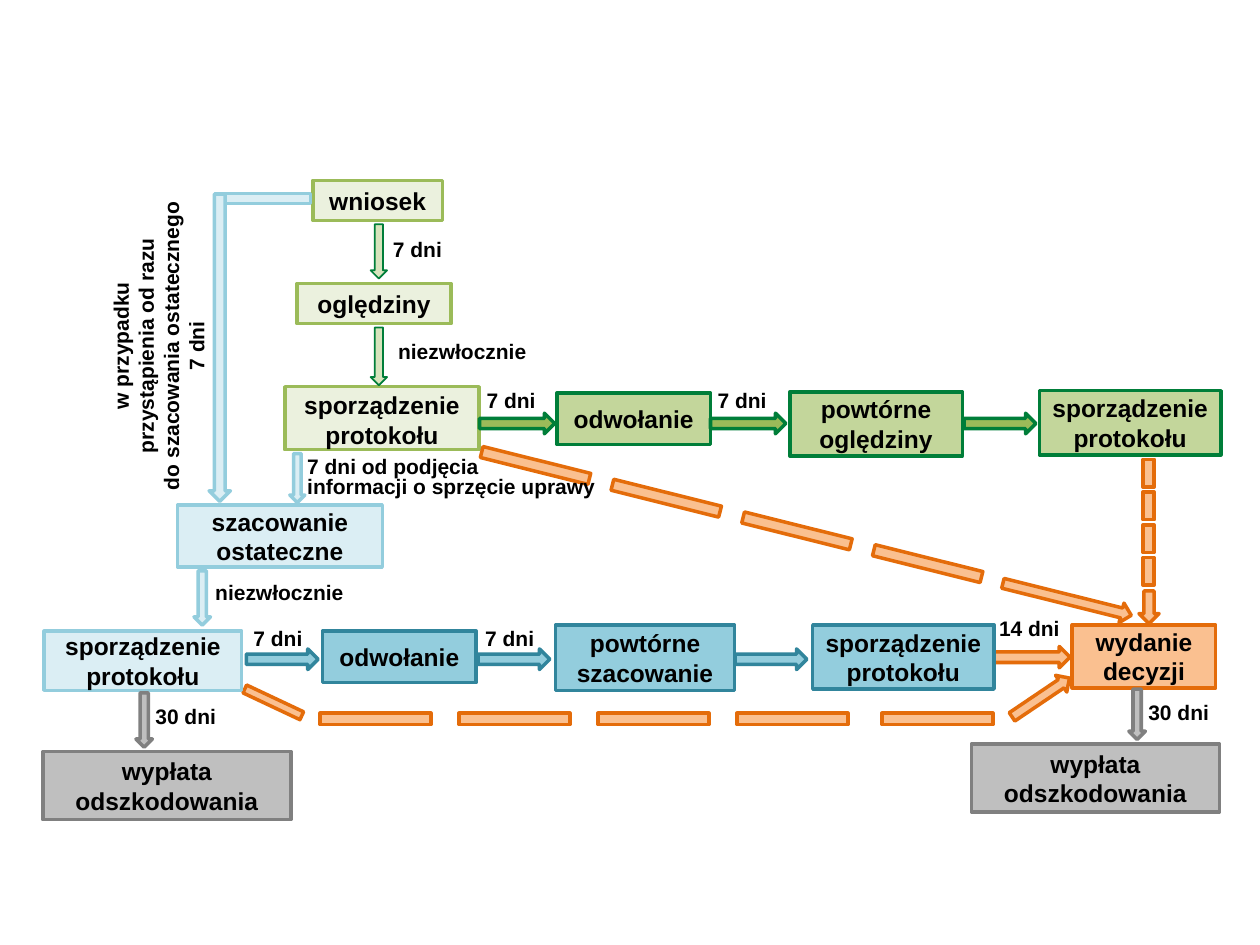
from math import cos, radians, sin

from pptx import Presentation
from pptx.dml.color import RGBColor
from pptx.enum.shapes import MSO_SHAPE
from pptx.enum.text import MSO_ANCHOR, PP_ALIGN
from pptx.util import Pt

# Skins: fill, line, line width
PALE = ("EBF1DE", "9BBB59", 2)
THIN = ("D7E4BD", "007E39", 1)
GREEN = ("C3D69B", "007E39", 2)
LEAF = ("9BBB59", "007E39", 2)
ICE = ("DBEEF4", "93CDDD", 2)
BLUE = ("93CDDD", "31859C", 2)
ORANGE = ("FAC090", "E46C0A", 2)
GREY = ("BFBFBF", "808080", 2)
RIGHT = 270


def hue(code):
    return RGBColor.from_string(code)


def write(frame, lines, align, space=None):
    """Fill a frame with lines, each a list of (text, size) runs."""
    frame.word_wrap = True
    for i, line in enumerate(lines):
        para = frame.add_paragraph() if i else frame.paragraphs[0]
        para.alignment = align
        if space:
            para.line_spacing = Pt(space)
        for text, size in line:
            run = para.add_run()
            run.text = text
            run.font.name = "Arial"
            run.font.size = Pt(size)
            run.font.bold = True
            run.font.color.rgb = hue("000000")


def draw(slide, kind, x, y, w, h, skin, turn=0):
    fill, line, width = skin
    shape = slide.shapes.add_shape(kind, Pt(x), Pt(y), Pt(w), Pt(h))
    shape.shadow.inherit = False
    shape.fill.solid()
    shape.fill.fore_color.rgb = hue(fill)
    shape.line.color.rgb = hue(line)
    shape.line.width = Pt(width)
    shape.rotation = turn
    return shape


def box(slide, x, y, w, h, skin, *runs):
    """Step box; a plain string is one run of 14 points."""
    shape = draw(slide, MSO_SHAPE.RECTANGLE, x, y, w, h, skin)
    shape.text_frame.vertical_anchor = MSO_ANCHOR.MIDDLE
    line = [(run, 14) if isinstance(run, str) else run for run in runs]
    write(shape.text_frame, [line], PP_ALIGN.CENTER)


def label(slide, x, y, w, *lines, h=21.6, turn=0, align=PP_ALIGN.LEFT, space=None):
    note = slide.shapes.add_textbox(Pt(x), Pt(y), Pt(w), Pt(h))
    note.rotation = turn
    write(note.text_frame, [[(line, 12)] for line in lines], align, space)


def dash(slide, x, y, long, thick, skin, turn=0):
    """Bar centred on x, y."""
    draw(slide, MSO_SHAPE.RECTANGLE, x - long / 2, y - thick / 2,
         long, thick, skin, turn)


def arrow(slide, x, y, long, thick, skin, turn=0):
    """Arrow whose tail is at x, y; it points down before its turn."""
    mid_x = x - sin(radians(turn)) * long / 2
    mid_y = y + cos(radians(turn)) * long / 2
    draw(slide, MSO_SHAPE.DOWN_ARROW, mid_x - thick / 2, mid_y - long / 2,
         thick, long, skin, turn)


def inspect(slide, x, y):
    """Request, inspection and report, from top to bottom."""
    box(slide, x + 16, y, 74, 23, PALE, "wniosek")
    box(slide, x + 7, y + 59, 88, 23, PALE, "oględziny")
    box(slide, x, y + 118, 111, 36, PALE,
        "sporządzenie", (" ", 16), "protokołu")
    arrow(slide, x + 53.7, y + 25.2, 31, 9.4, THIN)
    arrow(slide, x + 53.7, y + 84.2, 33, 9.4, THIN)
    label(slide, x + 54.7, y + 28.8, 52, "7 dni")
    label(slide, x + 57.6, y + 87, 106, "niezwłocznie")


def appeal(slide, x, y, skin, tip, steps, rise):
    """Row along the axis y; a step is arrow left, its length, box left,
    box centre, width, height and text."""
    for tail, long, left, mid, w, h, text in steps:
        arrow(slide, x + tail, y, long, 11.8, tip, RIGHT)
        box(slide, x + left, y + mid - h / 2, w, h, skin, text)
    for step in steps[:2]:
        label(slide, x + step[0] - 3, y - rise, 52, "7 dni")


def decide(slide, x, y):
    """Decision box with the dashed routes that lead to it."""
    for i in range(4):
        dash(slide, x - 306.7 + i * 74.7, y - 91.1 + i * 18.7,
             63.4, 6.5, ORANGE, 14)
        dash(slide, x + 43.6, y - 86.7 + i * 18.7, 15.8, 6.5, ORANGE, 90)
        dash(slide, x - 398.1 + i * 79.4, y + 53.7, 63.4, 6.5, ORANGE)
    dash(slide, x - 77, y + 53.7, 63.4, 6.5, ORANGE)
    dash(slide, x - 456.5, y + 44.3, 36, 5, ORANGE, 25.2)
    arrow(slide, x - 39.6, y - 23.8, 75.6, 11.5, ORANGE, 284)
    arrow(slide, x + 43.9, y - 19.4, 18.7, 11.5, ORANGE)
    arrow(slide, x - 34.4, y + 52.5, 39.6, 11.5, ORANGE, 236)
    arrow(slide, x - 45.3, y + 18.4, 44, 12.2, ORANGE, RIGHT)
    box(slide, x, y, 82, 36, ORANGE, "wydanie decyzji")
    label(slide, x - 48.9, y - 8.6, 54.7, "14 dni")


def assess(slide, x, y):
    """Final assessment, its report and the two ways in."""
    dash(slide, x + 49, y - 175.3, 54, 5.8, ICE)
    arrow(slide, x + 24.1, y - 177.8, 175.7, 12.2, ICE)
    arrow(slide, x + 68.4, y - 29.5, 28, 8.6, ICE)
    arrow(slide, x + 14.1, y + 37.5, 31, 9.4, ICE)
    box(slide, x, y, 117, 35.3, ICE, "szacowanie ostateczne")
    box(slide, x - 76.3, y + 72, 113, 33.8, ICE, "sporządzenie protokołu")
    label(slide, x + 14.4, y + 38.9, 106, "niezwłocznie")
    label(slide, x + 67, y - 29.5, 180, "7 dni od podjęcia",
          "informacji o sprzęcie uprawy", h=29.5, space=11)
    label(slide, x - 102.2, y - 123.8, 183, "w przypadku",
          "przystąpienia od razu", "do szacowania ostatecznego", "7 dni",
          h=65.5, turn=270, align=PP_ALIGN.CENTER)


def payout(slide, x, y, long, left):
    arrow(slide, x, y, long, 9.4, GREY)
    label(slide, x - 0.7, y + 2.5, 60, "30 dni")
    box(slide, x + left, y + long + 2.5, 141.8, 38.9, GREY,
        "wypłata odszkodowania")


def main():
    deck = Presentation()
    deck.slide_width, deck.slide_height = Pt(720), Pt(540)
    slide = deck.slides.add_slide(deck.slide_layouts[6])
    inspect(slide, 162.8, 103)
    decide(slide, 612.7, 357.1)
    assess(slide, 101.5, 288.7)
    appeal(slide, 274, 242, GREEN, LEAF, [
        (0, 43, 44.2, -2.7, 87.8, 29.5, "odwołanie"),
        (132, 43, 177.4, 0.2, 98.6, 36.7, "powtórne oględziny"),
        (277, 41, 320, -0.4, 103.7, 36.7, "sporządzenie protokołu"),
    ], 24.2)
    appeal(slide, 140.8, 376.7, BLUE, BLUE, [
        (0, 41, 43.5, -1.3, 87.8, 29.5, "odwołanie"),
        (132.4, 41, 176.7, -0.9, 102.2, 37.4, "powtórne szacowanie"),
        (279.3, 41, 323.6, -1.3, 103.7, 36.7, "sporządzenie protokołu"),
    ], 22.5)
    payout(slide, 82.4, 396, 31, -57.9)
    payout(slide, 649.8, 393.8, 28.8, -94.7)
    deck.save("out.pptx")


if __name__ == "__main__":
    main()
